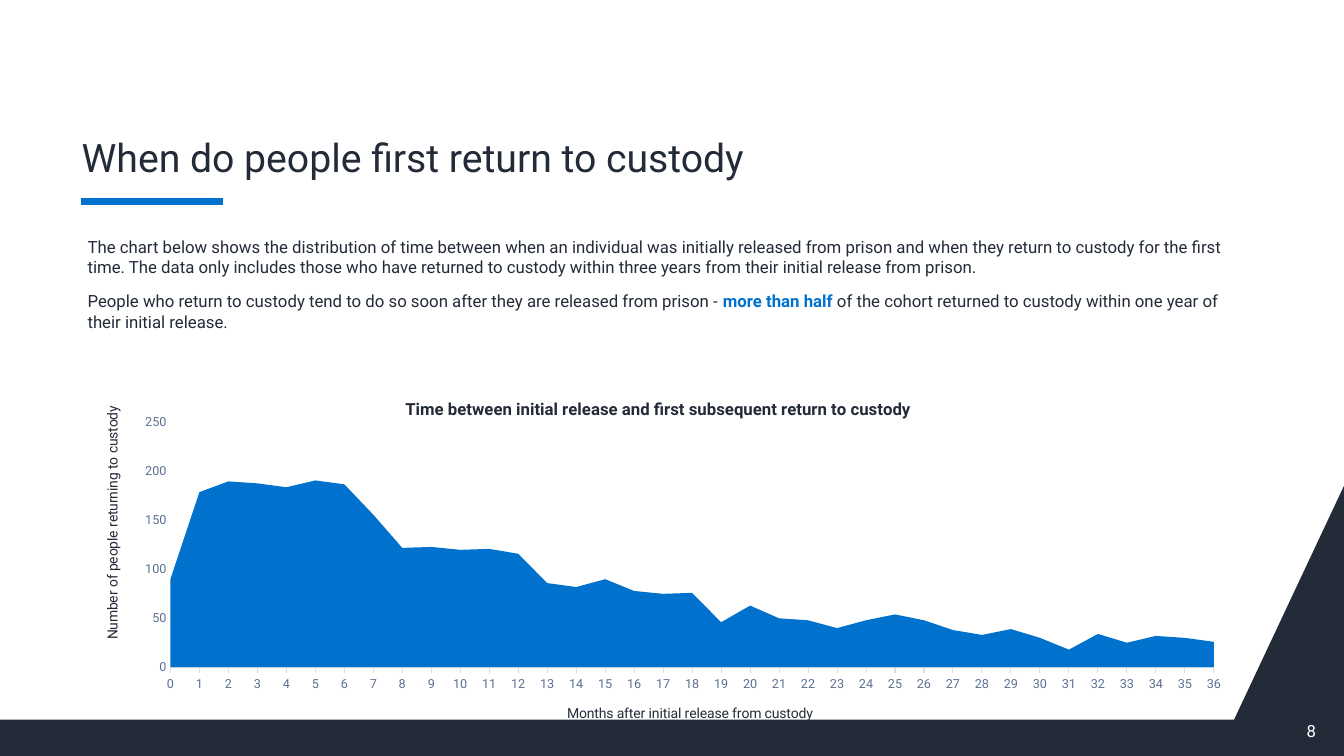
from lxml.etree import SubElement
from pptx import Presentation
from pptx.chart.data import CategoryChartData
from pptx.dml.color import RGBColor
from pptx.enum.chart import XL_CHART_TYPE as ChartType, XL_TICK_MARK as Tick
from pptx.enum.shapes import MSO_CONNECTOR as Connector
from pptx.enum.text import MSO_ANCHOR as Anchor, MSO_AUTO_SIZE as AutoSize, PP_ALIGN as Align
from pptx.oxml.ns import qn
from pptx.util import Pt

PX = 9144  # EMU per px, 100 px to the inch
FONT = "Roboto"
NAVY = RGBColor(0x23, 0x2B, 0x39)
BLUE = RGBColor(0x00, 0x72, 0xCE)
SLATE = RGBColor(0x5B, 0x6F, 0x94)
PALE = RGBColor(0xD8, 0xDE, 0xE7)
WHITE = RGBColor(0xFF, 0xFF, 0xFF)

RETURNS = [90, 179, 190, 188, 184, 191, 187, 156, 122, 123, 120, 121, 116,
           86, 82, 90, 78, 75, 76, 46, 63, 50, 48, 40, 48, 54, 48, 38, 33,
           39, 30, 18, 34, 25, 32, 30, 26]
PARAGRAPHS = [
    [("The chart below shows the distribution of time between when an individual was "
      "initially released from prison and when they return to custody for the first time. "
      "The data only includes those who have returned to custody within three years from "
      "their initial release from prison.", {})],
    [("People who return to custody tend to do so soon after they are released from "
      "prison - ", {}),
     ("more than half ", {"color": BLUE, "bold": True}),
     ("of the cohort returned to custody within one year of their initial release.", {})],
]


def px(*lengths):
    return [length * PX for length in lengths]


def format_font(font, size, color, bold=False):
    font.name = FONT
    font.size = Pt(size)
    font.bold = bold
    font.color.rgb = color


def write(paragraph, text, size=12, color=NAVY, bold=False):
    run = paragraph.add_run()
    run.text = text
    format_font(run.font, size, color, bold)


def add_text_frame(slide, box):
    frame = slide.shapes.add_textbox(*px(*box)).text_frame
    frame.word_wrap = True
    return frame


def add_footer_band(slide):
    builder = slide.shapes.build_freeform(1224, 714, scale=PX)
    builder.add_line_segments([(0, 714), (0, 750), (1333, 750), (1333, 482)])
    band = builder.convert_to_shape()
    band.shadow.inherit = False
    band.fill.solid()
    band.fill.fore_color.rgb = NAVY
    band.line.fill.background()


def add_title(slide, text):
    title = slide.shapes.title
    title.left, title.top, title.width, title.height = px(77, 72, 1150, 113)
    frame = title.text_frame
    frame.auto_size = AutoSize.NONE
    frame.word_wrap = True
    frame.vertical_anchor = Anchor.BOTTOM
    frame.margin_left, frame.margin_right = px(4, 4)
    heading = frame.paragraphs[0]
    heading.alignment = Align.LEFT
    heading.line_spacing = 0.9
    write(heading, text, size=28)


def add_title_rule(slide):
    rule = slide.shapes.add_connector(Connector.STRAIGHT, *px(80, 200, 221, 200))
    rule.line.color.rgb = BLUE
    rule.line.width = Pt(4.5)
    SubElement(rule._element.spPr, qn("a:effectLst"))


def add_body(slide):
    frame = add_text_frame(slide, (77, 230, 1150, 125))
    for number, runs in enumerate(PARAGRAPHS):
        paragraph = frame.add_paragraph() if number else frame.paragraphs[0]
        paragraph.space_before = Pt(10)
        for text, style in runs:
            write(paragraph, text, **style)


def place(element, index, **fractions):
    """Give a chart part a manual layout, in fractions of the chart."""
    for old in element.findall(qn("c:layout")):
        element.remove(old)
    layout = SubElement(element, qn("c:layout"))
    element.insert(index, layout)
    manual = SubElement(layout, qn("c:manualLayout"))
    if "w" in fractions:
        SubElement(manual, qn("c:layoutTarget")).set("val", "inner")
    for mode in ("xMode", "yMode"):
        SubElement(manual, qn("c:" + mode)).set("val", "edge")
    for name, value in fractions.items():
        SubElement(manual, qn("c:" + name)).set("val", str(value))


def set_chart_title(title, text, x, y, turn=0, **style):
    frame = title.text_frame
    write(frame.paragraphs[0], text, **style)
    frame._txBody.bodyPr.set("rot", str(turn * 60000))
    place(title._element, 1, x=x, y=y)


def format_axis(axis, tick):
    axis.has_major_gridlines = False
    axis.major_tick_mark = tick
    axis.minor_tick_mark = Tick.NONE
    format_font(axis.tick_labels.font, 9, SLATE)


def add_returns_chart(slide):
    data = CategoryChartData()
    data.categories = [str(month) for month in range(len(RETURNS))]
    data.add_series("Series 1", RETURNS)
    chart = slide.shapes.add_chart(ChartType.AREA, *px(77, 375, 1150, 345), data).chart
    format_font(chart.font, 10, NAVY)
    chart.has_legend = False
    chart.has_title = True
    set_chart_title(chart.chart_title,
                    "Time between initial release and first subsequent return to custody",
                    0.28, 0.05, bold=True)
    place(chart._chartSpace.chart.plotArea, 0, x=0.08, y=0.13, w=0.9, h=0.71)

    plot = chart.plots[0]
    plot.vary_by_categories = False
    area = plot.series[0].format
    area.fill.solid()
    area.fill.fore_color.rgb = BLUE
    area.line.fill.background()

    months, people = chart.category_axis, chart.value_axis
    format_axis(months, Tick.OUTSIDE)
    months.format.line.color.rgb = PALE
    months.format.line.width = Pt(0.75)
    set_chart_title(months.axis_title, "Months after initial release from custody",
                    0.42, 0.94, size=10)
    format_axis(people, Tick.NONE)
    people.format.line.fill.background()
    people.minimum_scale, people.maximum_scale, people.major_unit = 0, 250, 50
    set_chart_title(people.axis_title, "Number of people returning to custody",
                    0.02, 0.08, turn=-90, size=10)


def main():
    deck = Presentation()
    deck.slide_width, deck.slide_height = px(1333, 750)
    slide = deck.slides.add_slide(deck.slide_layouts[5])
    add_footer_band(slide)
    add_title_rule(slide)
    add_title(slide, "When do people first return to custody")
    add_returns_chart(slide)
    add_body(slide)
    page_number = add_text_frame(slide, (1286, 710, 48, 30))
    write(page_number.paragraphs[0], "8", color=WHITE)
    deck.save("out.pptx")


if __name__ == "__main__":
    main()
